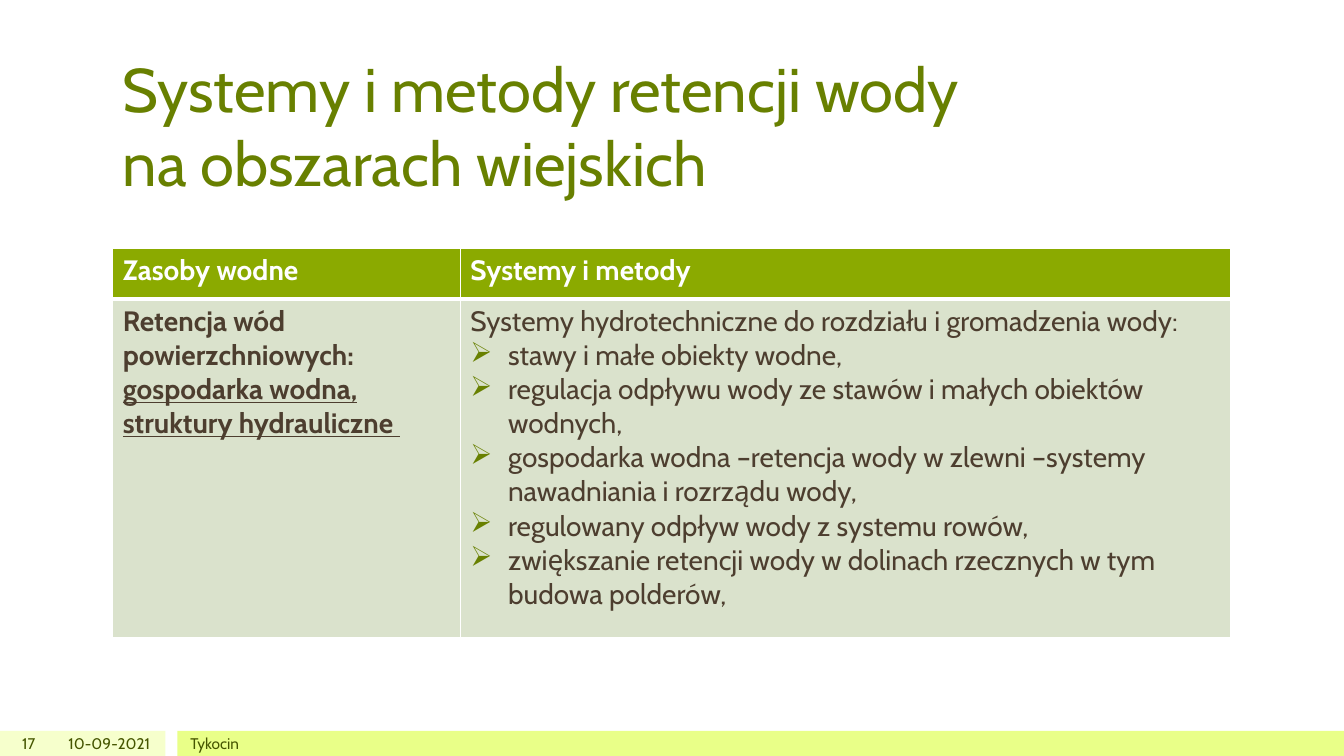
from dataclasses import dataclass

from lxml import etree
from pptx import Presentation
from pptx.dml.color import RGBColor
from pptx.enum.shapes import MSO_SHAPE
from pptx.enum.text import MSO_ANCHOR, PP_ALIGN
from pptx.oxml.ns import qn
from pptx.util import Cm, Pt

RECT = MSO_SHAPE.RECTANGLE
TOP, MID, LOW = MSO_ANCHOR.TOP, MSO_ANCHOR.MIDDLE, MSO_ANCHOR.BOTTOM
LEFT, RIGHT = PP_ALIGN.LEFT, PP_ALIGN.RIGHT


@dataclass(frozen=True)
class Theme:
    font: str = "Cabin"
    title: str = "688000"
    head: str = "8BAA00"
    cell: str = "DAE2CC"
    body: str = "4D3E2F"
    white: str = "FFFFFF"
    pale: str = "F6FFCC"
    lime: str = "E9FF88"
    foot: str = "455500"
    big: int = 44
    mid: int = 20
    small: int = 11


T = Theme()
WIDE, HIGH = 33.87, 19.05

HEADS = ["Zasoby wodne", "Systemy i metody"]
TOPIC = "Retencja wód powierzchniowych:"
DETAIL = "gospodarka wodna, struktury hydrauliczne "
INTRO = "Systemy hydrotechniczne do rozdziału i gromadzenia wody:"
ITEMS = [
    "stawy i małe obiekty wodne,",
    "regulacja odpływu wody ze stawów i małych obiektów wodnych,",
    "gospodarka wodna –retencja wody w zlewni –systemy nawadniania i rozrządu wody,",
    "regulowany odpływ wody z systemu rowów,",
    "zwiększanie retencji wody w dolinach rzecznych w tym budowa polderów,",
]


def rgb(code):
    return RGBColor.from_string(code)


def mark(par):
    """Give a paragraph an arrow bullet with a hanging indent."""
    props = par._p.get_or_add_pPr()
    props.set("marL", str(Cm(0.95)))
    props.set("indent", str(-Cm(0.95)))
    tint = etree.SubElement(props, qn("a:buClr"))
    etree.SubElement(tint, qn("a:srgbClr"), val=T.title)
    etree.SubElement(props, qn("a:buChar"), char="➢")


def write(frame, text, size=T.mid, color=T.body, bold=False, line=False,
          align=LEFT, bullet=False, first=True):
    """Put text in the first paragraph, or in a new one."""
    par = frame.paragraphs[0] if first else frame.add_paragraph()
    par.alignment = align
    if bullet:
        mark(par)
    par.text = text
    for run in par.runs:
        font = run.font
        font.name, font.size = T.font, Pt(size)
        font.bold, font.underline = bold, line
        font.color.rgb = rgb(color)


def label(slide, box, text, anchor=MID, **form):
    frame = slide.shapes.add_textbox(*map(Cm, box)).text_frame
    frame.word_wrap = True
    frame.vertical_anchor = anchor
    if anchor == MID:
        frame.margin_top = frame.margin_bottom = 0
    write(frame, text, **form)


def bar(slide, box, color):
    shape = slide.shapes.add_shape(RECT, *map(Cm, box))
    shape.shadow.inherit = False
    shape.fill.solid()
    shape.fill.fore_color.rgb = rgb(color)
    shape.line.fill.background()


def edge(cell, low):
    """Draw white cell borders; low is the bottom width in points."""
    props = cell._tc.get_or_add_tcPr()
    widths = {"lnL": 1, "lnR": 1, "lnT": 1, "lnB": low}
    for spot, (side, width) in enumerate(widths.items()):
        line = etree.Element(qn("a:" + side), w=str(Pt(width)))
        fill = etree.SubElement(line, qn("a:solidFill"))
        etree.SubElement(fill, qn("a:srgbClr"), val=T.white)
        props.insert(spot, line)


def footer(slide, box):
    left, top, width, high = box
    split = left + 4.47
    # Bands
    bar(slide, (left, top, 4.17, high), T.pale)
    bar(slide, (split, top, width - 4.47, high), T.lime)
    # Date, place and page number
    form = {"size": T.small, "color": T.foot}
    label(slide, (left + 1.27, top, 2.77, high), "10-09-2021", align=RIGHT, **form)
    label(slide, (split + 0.08, top, 25.4, high), "Tykocin", **form)
    label(slide, (left, top, 1.14, high), "17", align=RIGHT, **form)


def grid(slide, box):
    left, top, width, high = box
    table = slide.shapes.add_table(2, 2, *map(Cm, box)).table
    table.horz_banding = False
    for col, size in zip(table.columns, (8.76, width - 8.76)):
        col.width = Cm(size)
    for row, size in zip(table.rows, (1.27, high - 1.27)):
        row.height = Cm(size)

    # Fills and borders
    for row, (color, low) in enumerate(((T.head, 3), (T.cell, 1))):
        for col in range(2):
            cell = table.cell(row, col)
            cell.vertical_anchor = TOP
            cell.fill.solid()
            cell.fill.fore_color.rgb = rgb(color)
            edge(cell, low)

    # Header row
    for col, text in enumerate(HEADS):
        write(table.cell(0, col).text_frame, text, color=T.white, bold=True)

    # Body row
    topic, list_ = (table.cell(1, col).text_frame for col in range(2))
    write(topic, TOPIC, bold=True)
    write(topic, DETAIL, bold=True, line=True, first=False)
    write(list_, INTRO)
    for text in ITEMS:
        write(list_, text, bullet=True, first=False)


def main():
    deck = Presentation()
    deck.slide_width, deck.slide_height = Cm(WIDE), Cm(HIGH)
    slide = deck.slides.add_slide(deck.slide_layouts[6])
    footer(slide, (0, 18.42, WIDE, 0.63))
    label(slide, (2.84, 1.85, 26.04, 3.28),
          "Systemy i metody retencji wody\vna obszarach wiejskich",
          anchor=LOW, size=T.big, color=T.title)
    grid(slide, (2.84, 6.27, 28.17, 9.8))
    deck.save("out.pptx")


if __name__ == "__main__":
    main()
